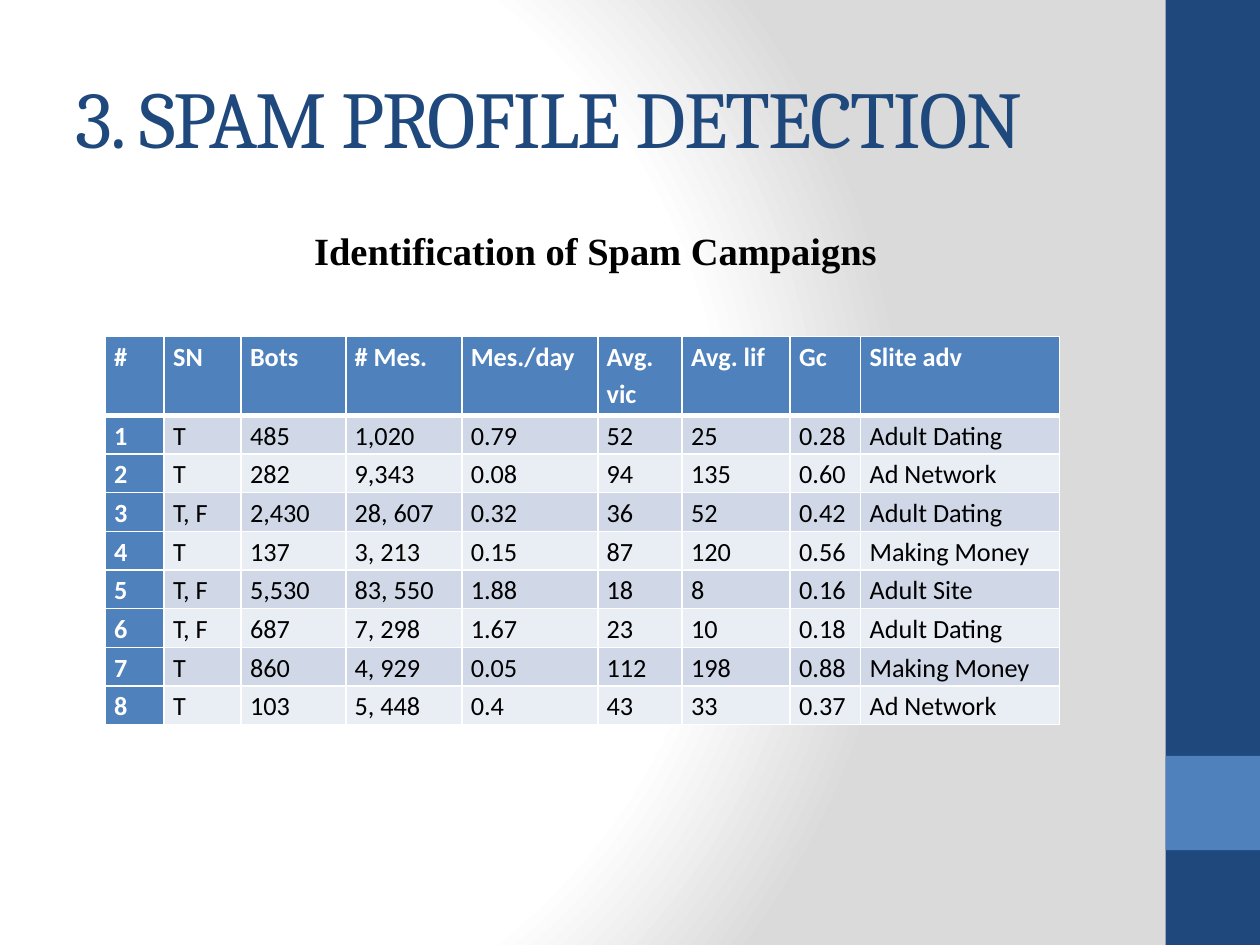
from pptx import Presentation
from pptx.dml.color import RGBColor
from pptx.enum.shapes import MSO_SHAPE as Shape
from pptx.enum.text import MSO_ANCHOR as Anchor, PP_ALIGN as Align
from pptx.oxml import parse_xml
from pptx.oxml.ns import nsdecls, qn
from pptx.util import Cm, Pt

TITLE = "3. SPAM PROFILE DETECTION"
SUBTITLE = "Identification of Spam Campaigns"
HEADER = ["#", "SN", "Bots", "# Mes.", "Mes./day", "Avg. vic", "Avg. lif", "Gc", "Slite adv"]
CAMPAIGNS = [
    ("T", "485", "1,020", "0.79", "52", "25", "0.28", "Adult Dating"),
    ("T", "282", "9,343", "0.08", "94", "135", "0.60", "Ad Network"),
    ("T, F", "2,430", "28, 607", "0.32", "36", "52", "0.42", "Adult Dating"),
    ("T", "137", "3, 213", "0.15", "87", "120", "0.56", "Making Money"),
    ("T, F", "5,530", "83, 550", "1.88", "18", "8", "0.16", "Adult Site"),
    ("T, F", "687", "7, 298", "1.67", "23", "10", "0.18", "Adult Dating"),
    ("T", "860", "4, 929", "0.05", "112", "198", "0.88", "Making Money"),
    ("T", "103", "5, 448", "0.4", "43", "33", "0.37", "Ad Network"),
]
COLUMN_WIDTHS = [1.19, 1.55, 2.11, 2.34, 2.74, 1.7, 2.18, 1.42, 4.01]
HEADER_HEIGHT, ROW_HEIGHT = 1.59, 0.78

THEME = {
    "navy": "1F497D", "blue": "4F81BD", "white": "FFFFFF", "black": "000000",
    "grey": "DADADA", "bands": ("D0D8E8", "E9EDF4"),
    "title": ("Cambria", 46), "subtitle": ("Times New Roman", 22), "table": ("Calibri", 15),
}
SLIDE_WIDTH, SLIDE_HEIGHT = 25.4, 19.05
BAR_WIDTH = 1.9
BAR_LEFT = SLIDE_WIDTH - BAR_WIDTH


def style_text(paragraph, style, color, bold=False):
    for run in paragraph.runs:
        family, size = THEME[style]
        run.font.name, run.font.size, run.font.bold = family, Pt(size), bold
        run.font.color.rgb = RGBColor.from_string(color)


def paint_background(slide):
    """Radial gradient, white around its centre and grey towards the right."""
    slide.background.fill.solid()
    solid = next(slide.element.iter(qn("a:solidFill")))
    stops = [(0, THEME["white"]), (75, THEME["white"]), (100, THEME["grey"])]
    stop_xml = "".join(
        f'<a:gs pos="{pos * 1000}"><a:srgbClr val="{color}"/></a:gs>' for pos, color in stops)
    gradient = parse_xml(
        f'<a:gradFill {nsdecls("a")} rotWithShape="1"><a:gsLst>{stop_xml}</a:gsLst>'
        '<a:path path="circle"><a:fillToRect l="20000" t="50000" r="100000" b="50000"/>'
        '</a:path></a:gradFill>')
    solid.getparent().replace(solid, gradient)


def add_side_block(slide, top, height, color):
    block = slide.shapes.add_shape(
        Shape.RECTANGLE, Cm(BAR_LEFT), Cm(top), Cm(BAR_WIDTH), Cm(height))
    block.shadow.inherit = False
    block.fill.solid()
    block.fill.fore_color.rgb = RGBColor.from_string(color)
    block.line.fill.background()


def set_borders(cell, bottom, top):
    properties = cell._tc.get_or_add_tcPr()
    for index, (side, width) in enumerate([("L", 1), ("R", 1), ("T", top), ("B", bottom)]):
        properties.insert(index, parse_xml(
            f'<a:ln{side} {nsdecls("a")} w="{Pt(width)}"><a:solidFill>'
            f'<a:srgbClr val="{THEME["white"]}"/></a:solidFill></a:ln{side}>'))


def fill_cell(cell, text, row, column):
    is_heading = row == 0 or column == 0
    cell.text_frame.text = text
    cell.margin_left = cell.margin_right = Cm(0.18)
    cell.margin_top = cell.margin_bottom = 0
    paragraph = cell.text_frame.paragraphs[0]
    paragraph.line_spacing = 1.15
    style_text(paragraph, "table", THEME["white" if is_heading else "black"], is_heading)
    cell.fill.solid()
    cell.fill.fore_color.rgb = RGBColor.from_string(
        THEME["blue"] if is_heading else THEME["bands"][(row - 1) % 2])
    set_borders(cell, bottom=3 if row == 0 else 1, top=3 if row == 1 else 1)


def add_campaign_table(slide):
    rows = [HEADER] + [(str(n), *values) for n, values in enumerate(CAMPAIGNS, 1)]
    heights = [HEADER_HEIGHT] + [ROW_HEIGHT] * len(CAMPAIGNS)
    table = slide.shapes.add_table(
        len(rows), len(HEADER), Cm(2.12), Cm(6.78),
        Cm(sum(COLUMN_WIDTHS)), Cm(sum(heights))).table
    for column, width in zip(table.columns, COLUMN_WIDTHS):
        column.width = Cm(width)
    for r, (values, height) in enumerate(zip(rows, heights)):
        table.rows[r].height = Cm(height)
        for c, text in enumerate(values):
            fill_cell(table.cell(r, c), text, r, c)


def add_title(slide):
    title = slide.shapes.title
    title.left, title.top, title.width, title.height = Cm(1.27), Cm(0.76), Cm(21.17), Cm(3.18)
    title.text_frame.text = TITLE
    title.text_frame.vertical_anchor = Anchor.MIDDLE
    heading = title.text_frame.paragraphs[0]
    heading.alignment = Align.LEFT
    style_text(heading, "title", THEME["navy"])
    heading.runs[0].font._element.set("spc", "-100")


def add_subtitle(slide):
    box = slide.shapes.add_textbox(Cm(1.27), Cm(4.45), Cm(21.17), Cm(1.4))
    box.text_frame.word_wrap = True
    box.text_frame.text = SUBTITLE
    subtitle = box.text_frame.paragraphs[0]
    subtitle.alignment = Align.CENTER
    subtitle.space_before = Pt(4)
    subtitle._p.get_or_add_pPr().set("marL", str(Cm(0.3)))
    style_text(subtitle, "subtitle", THEME["black"], bold=True)


def main():
    deck = Presentation()
    deck.slide_width, deck.slide_height = Cm(SLIDE_WIDTH), Cm(SLIDE_HEIGHT)
    slide = deck.slides.add_slide(deck.slide_layouts[5])
    paint_background(slide)
    add_side_block(slide, 0, SLIDE_HEIGHT, THEME["navy"])
    add_side_block(slide, 15.24, BAR_WIDTH, THEME["blue"])
    add_title(slide)
    add_subtitle(slide)
    add_campaign_table(slide)
    deck.save("out.pptx")


if __name__ == "__main__":
    main()
